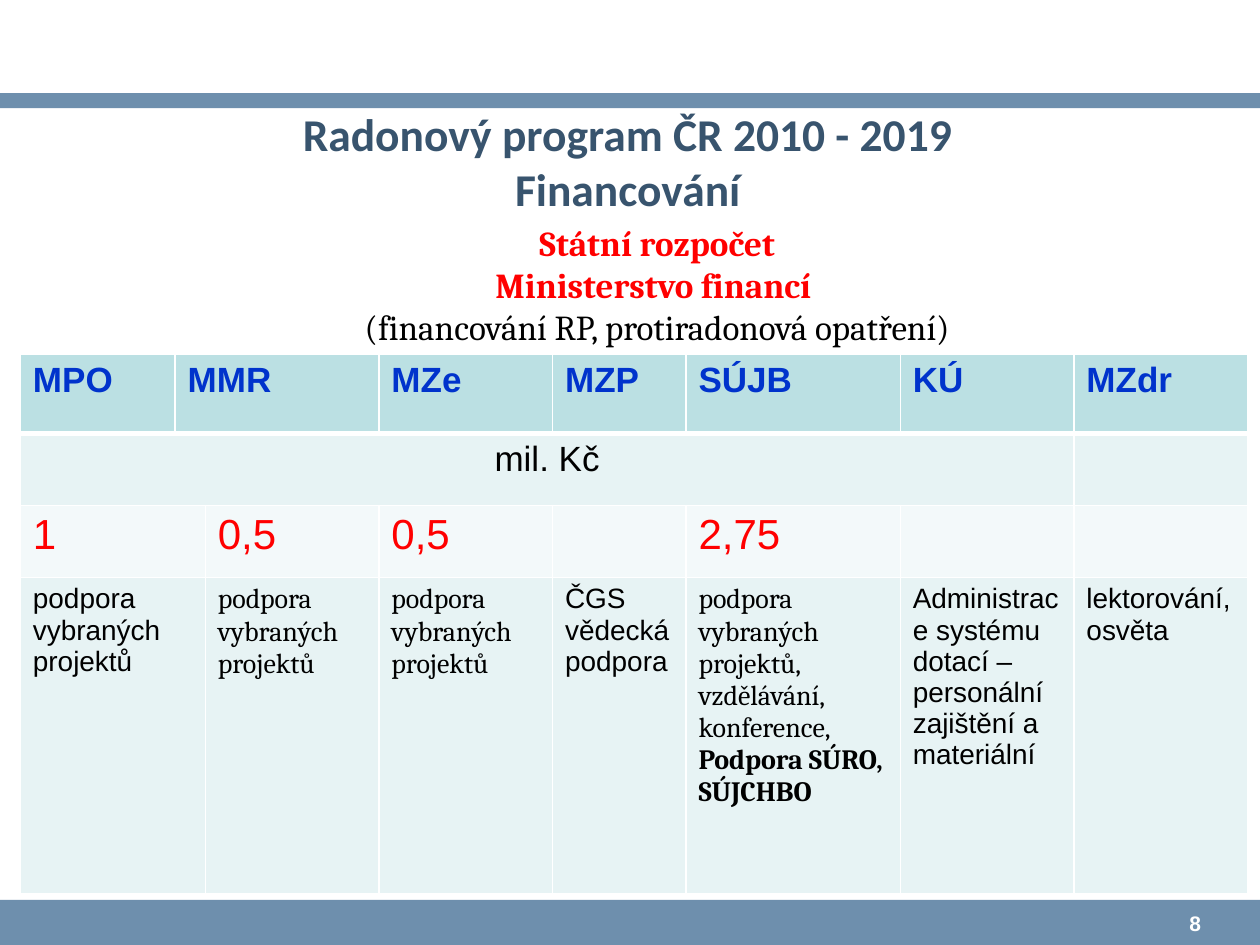
from lxml.etree import SubElement as Sub
from pptx import Presentation
from pptx.dml.color import RGBColor as RGB
from pptx.enum.shapes import MSO_SHAPE as Shape
from pptx.enum.text import MSO_ANCHOR as Anchor, PP_ALIGN as Align
from pptx.oxml.ns import qn
from pptx.util import Cm, Pt

WHITE = RGB(0xFF, 0xFF, 0xFF)
BLACK = RGB(0, 0, 0)
RED = RGB(0xFF, 0, 0)
BLUE = RGB(0x00, 0x33, 0xCC)
NAVY = RGB(0x38, 0x54, 0x6E)
STEEL = RGB(0x6E, 0x8F, 0xAD)
TEAL = RGB(0xBB, 0xE0, 0xE3)
MIST = RGB(0xE7, 0xF3, 0xF4)
PALE = RGB(0xF3, 0xF9, 0xFA)

COLS = [3.12, 0.39, 3.5, 3.5, 2.69, 4.32, 3.5, 3.5]
ROWS = [1.6, 1.45, 1.45, 6.38]
FILLS = [TEAL, MIST, PALE, MIST]
MERGES = [(0, 1, 2), (1, 0, 6), (2, 0, 1), (3, 0, 1)]  # row, first, last

HEADS = {0: "MPO", 1: "MMR", 3: "MZe", 4: "MZP", 5: "SÚJB", 6: "KÚ", 7: "MZdr"}
SUMS = {0: "1", 2: "0,5", 3: "0,5", 5: "2,75"}
HELP = "podpora vybraných projektů"
TASKS = {
    0: ([HELP], "Arial"),
    2: ([HELP], "Cambria"),
    3: ([HELP], "Cambria"),
    4: (["ČGS", "vědecká podpora"], "Arial"),
    5: ([HELP + ", vzdělávání, konference,",
         ("Podpora SÚRO, SÚJCHBO", {"bold": True})], "Cambria"),
    6: (["Administrace systému dotací – personální zajištění a materiální"],
        "Arial"),
    7: (["lektorování, osvěta"], "Arial"),
}


def write(frame, lines, **base):
    """Fill a text frame; a line is text, or text with its own format."""
    for i, line in enumerate(lines):
        text, own = line if isinstance(line, tuple) else (line, {})
        fmt = {"font": "Arial", "size": 16, "color": BLACK, "bold": False,
               "align": Align.LEFT, "indent": 0, **base, **own}
        para = frame.paragraphs[0] if i == 0 else frame.add_paragraph()
        para.text = text
        para.alignment = fmt["align"]
        if fmt["indent"]:
            para._p.get_or_add_pPr().set("marL", str(Cm(fmt["indent"])))
        for run in para.runs:
            run.font.name = fmt["font"]
            run.font.size = Pt(fmt["size"])
            run.font.bold = fmt["bold"]
            run.font.color.rgb = fmt["color"]


def add_bar(slide, top, height):
    bar = slide.shapes.add_shape(
        Shape.RECTANGLE, 0, Cm(top), Cm(25.4), Cm(height))
    bar.shadow.inherit = False
    bar.fill.solid()
    bar.fill.fore_color.rgb = STEEL
    bar.line.fill.background()


def add_text(slide, box, lines, anchor=Anchor.TOP, **fmt):
    frame = slide.shapes.add_textbox(*map(Cm, box)).text_frame
    frame.word_wrap = True
    frame.vertical_anchor = anchor
    write(frame, lines, **fmt)


def add_edge(cell, side, width):
    props = cell._tc.get_or_add_tcPr()
    line = Sub(props, qn("a:ln" + side), w=str(Pt(width)))
    Sub(Sub(line, qn("a:solidFill")), qn("a:srgbClr"), val=str(WHITE))


def add_grid(slide):
    table = slide.shapes.add_table(
        len(ROWS), len(COLS), Cm(0.41), Cm(7.14),
        Cm(sum(COLS)), Cm(sum(ROWS))).table
    for col, width in zip(table.columns, COLS):
        col.width = Cm(width)
    for row, height in zip(table.rows, ROWS):
        row.height = Cm(height)

    # Borders and fills, with a thick rule under the header
    for r, fill in enumerate(FILLS):
        for c in range(len(COLS)):
            cell = table.cell(r, c)
            for side in "LRTB":
                thick = (r, side) in [(0, "B"), (1, "T")]
                add_edge(cell, side, 3 if thick else 1)
            cell.fill.solid()
            cell.fill.fore_color.rgb = fill
    for r, first, last in MERGES:
        table.cell(r, first).merge(table.cell(r, last))

    # Cell text
    for c, text in HEADS.items():
        write(table.cell(0, c).text_frame, [text],
              size=20, color=BLUE, bold=True)
    write(table.cell(1, 0).text_frame, ["mil. Kč"],
          size=20, align=Align.CENTER)
    for c, text in SUMS.items():
        write(table.cell(2, c).text_frame, [text], size=24, color=RED)
    for c, (lines, font) in TASKS.items():
        write(table.cell(3, c).text_frame, lines, font=font)


def main():
    deck = Presentation()
    deck.slide_width, deck.slide_height = Cm(25.4), Cm(19.05)
    slide = deck.slides.add_slide(deck.slide_layouts[6])

    # Bands
    add_bar(slide, 18.14, 0.91)
    add_bar(slide, 1.88, 0.3)

    # Title and source of funds
    add_text(slide, (2.16, 1.93, 21, 2.62),
             ["Radonový program ČR 2010 - 2019\nFinancování"], Anchor.MIDDLE,
             font="Calibri", size=26, color=NAVY, bold=True,
             align=Align.CENTER)
    strong = {"color": RED, "bold": True}
    add_text(slide, (1.19, 4.35, 23, 2.8),
             [("Státní rozpočet", strong),
              ("Ministerstvo financí ", strong),
              "(financování RP, protiradonová opatření)"],
             font="Cambria", size=20, align=Align.CENTER, indent=1.12)

    # Slide number
    add_text(slide, (21.84, 18.24, 2.62, 0.81), ["8"],
             size=12, color=WHITE, bold=True, align=Align.RIGHT)

    # Ministries table
    add_grid(slide)
    deck.save("out.pptx")


if __name__ == "__main__":
    main()
